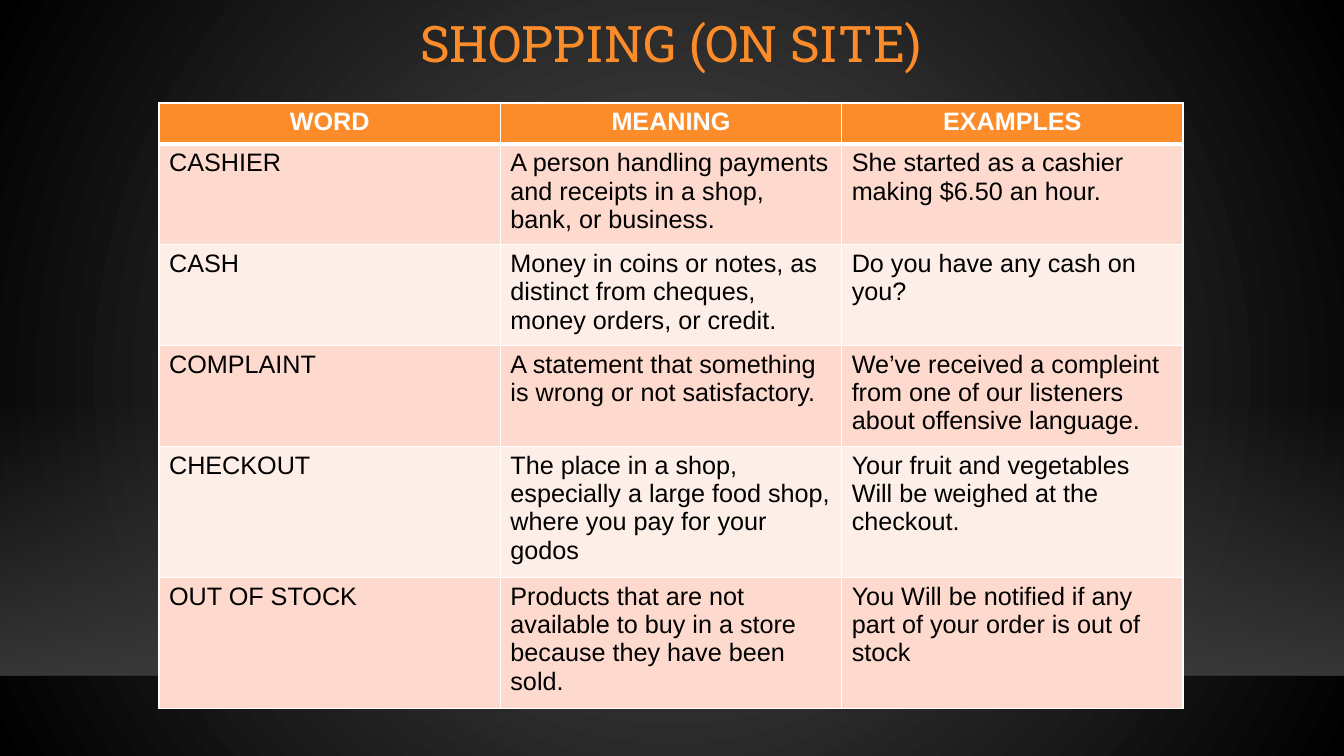
from lxml import etree
from pptx import Presentation
from pptx.dml.color import RGBColor
from pptx.enum.shapes import MSO_CONNECTOR, MSO_SHAPE
from pptx.enum.text import MSO_ANCHOR, PP_ALIGN
from pptx.oxml import parse_xml
from pptx.oxml.ns import nsdecls, qn
from pptx.util import Pt

WIDE, HIGH = 1344, 756
PX = 12192000 / WIDE
INK = {"orange": "FB8C29", "peach": "FDDACD", "pale": "FEEEE8", "white": "FFFFFF",
       "black": "000000", "gray": "505050", "floor": "454545", "edge": "000001"}
HEADS = ["WORD", "MEANING", "EXAMPLES"]
WORDS = [
    ["CASHIER", "A person handling payments and receipts in a shop, bank, or business.",
     "She started as a cashier making $6.50 an hour."],
    ["CASH", "Money in coins or notes, as distinct from cheques, money orders, or credit.",
     "Do you have any cash on you?"],
    ["COMPLAINT", "A statement that something is wrong or not satisfactory.",
     "We’ve received a compleint from one of our listeners about offensive language."],
    ["CHECKOUT", "The place in a shop, especially a large food shop, where you pay for your godos",
     "Your fruit and vegetables Will be weighed at the checkout."],
    ["OUT OF STOCK", "Products that are not available to buy in a store because they have been sold.",
     "You Will be notified if any part of your order is out of stock"],
]
ROWS = [41, 95, 95, 95, 123, 123]


def emu(*sizes):
    return [round(size * PX) for size in sizes]


def rgb(name):
    return RGBColor.from_string(INK[name])


def style(font, color, **form):
    font.color.rgb = rgb(color)
    for key, value in form.items():
        setattr(font, key, value)


def blend(owner, stops, shade):
    """Swap the solid fill of an element for a gradient; stops are (place, colour, alpha)."""
    marks = "".join(
        f'<a:gs pos="{at * 1000}"><a:srgbClr val="{INK[name]}">'
        f'<a:alpha val="{alpha * 1000}"/></a:srgbClr></a:gs>' for at, name, alpha in stops)
    owner.replace(owner.find(qn("a:solidFill")), parse_xml(
        f'<a:gradFill {nsdecls("a")} rotWithShape="1"><a:gsLst>{marks}</a:gsLst>{shade}</a:gradFill>'))


def add_back(slide):
    slide.background.fill.solid()
    blend(slide.element.find(".//" + qn("p:bgPr")), [(0, "gray", 100), (100, "black", 100)],
          '<a:path path="circle"><a:fillToRect l="50000" t="50000" r="50000" b="50000"/></a:path>')


def add_floor(slide, left, top, width, height):
    glow = slide.shapes.add_shape(MSO_SHAPE.RECTANGLE, *emu(left, top, width, height))
    glow.shadow.inherit = False
    glow.line.fill.background()
    glow.fill.solid()
    blend(glow.element.spPr, [(0, "floor", 0), (100, "floor", 80)], '<a:lin ang="5400000" scaled="0"/>')

    base = top + height
    edge = slide.shapes.add_connector(MSO_CONNECTOR.STRAIGHT, *emu(left, base, left + width, base))
    edge.line.width = Pt(1)
    edge.line.color.rgb = rgb("edge")
    tint = edge.element.spPr.find(".//" + qn("a:srgbClr"))
    etree.SubElement(tint, qn("a:alpha"), val="20000")
    etree.SubElement(edge.element.spPr, qn("a:effectLst"))


def add_title(slide, text, left, top, width, height):
    frame = slide.shapes.add_textbox(*emu(left, top, width, height)).text_frame
    frame.word_wrap = True
    frame.vertical_anchor = MSO_ANCHOR.MIDDLE
    para = frame.paragraphs[0]
    para.text = text
    para.alignment = PP_ALIGN.CENTER
    para.line_spacing = 0.9
    style(para.font, "orange", size=Pt(36), name="Roboto Slab")


def add_rules(cell, **widths):
    """Draw white cell borders, given in points by side."""
    props = cell._tc.get_or_add_tcPr()
    for spot, (side, width) in enumerate(widths.items()):
        props.insert(spot, parse_xml(
            f'<a:ln{side} {nsdecls("a")} w="{Pt(width)}"><a:solidFill>'
            f'<a:srgbClr val="{INK["white"]}"/></a:solidFill></a:ln{side}>'))


def add_words(slide, left, top, width):
    grid = slide.shapes.add_table(len(ROWS), len(HEADS), *emu(left, top, width, sum(ROWS))).table
    for row, high in zip(grid.rows, ROWS):
        row.height = emu(high)[0]
    for r, line in enumerate([HEADS] + WORDS):
        head = r == 0
        fill = "orange" if head else "peach" if r % 2 else "pale"
        for c, text in enumerate(line):
            cell = grid.cell(r, c)
            cell.fill.solid()
            cell.fill.fore_color.rgb = rgb(fill)
            add_rules(cell, L=1, R=1, T=3 if r == 1 else 1, B=3 if head else 1)
            para = cell.text_frame.paragraphs[0]
            para.text = text
            para.alignment = PP_ALIGN.CENTER if head else PP_ALIGN.LEFT
            style(para.font, "white" if head else "black", size=Pt(18), name="Arial", bold=head)


def main():
    deck = Presentation()
    deck.slide_width, deck.slide_height = emu(WIDE, HIGH)
    slide = deck.slides.add_slide(deck.slide_layouts[6])
    add_back(slide)
    add_floor(slide, 0, 400, WIDE, 276)
    add_title(slide, "SHOPPING (ON SITE)", 159, -12, 1024, 116)
    add_words(slide, 159, 103, 1024)
    deck.save("out.pptx")


if __name__ == "__main__":
    main()
